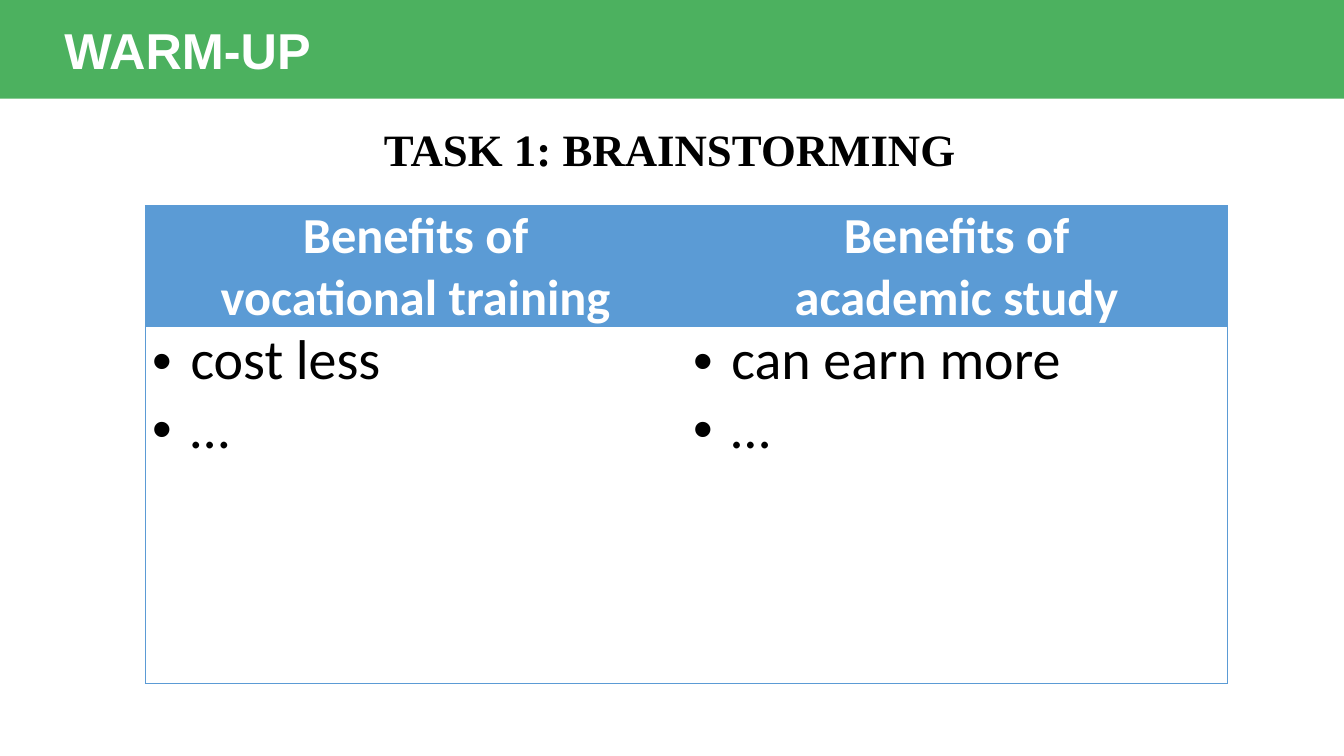
from lxml import etree
from pptx import Presentation
from pptx.dml.color import RGBColor
from pptx.enum.shapes import MSO_SHAPE
from pptx.enum.text import MSO_ANCHOR, MSO_AUTO_SIZE, PP_ALIGN
from pptx.oxml.ns import qn
from pptx.util import Inches, Pt

RECTANGLE = MSO_SHAPE.RECTANGLE
TOP = MSO_ANCHOR.TOP
GROW = MSO_AUTO_SIZE.SHAPE_TO_FIT_TEXT
LEFT, CENTER = PP_ALIGN.LEFT, PP_ALIGN.CENTER

GREEN, BLUE, WHITE, BLACK = "4CB15F", "5B9BD5", "FFFFFF", "000000"
BANNER_FONT = {"name": "Arial", "size": Pt(36), "bold": True}
TASK_FONT = {"name": "Times New Roman", "size": Pt(32), "bold": True}
HEADING_FONT = {"name": "Calibri", "size": Pt(36), "bold": True}
BODY_FONT = {"name": "Calibri", "size": Pt(40), "bold": False}
CELL_FORMAT = {"margin_left": Inches(0.07), "margin_right": Inches(0.07),
               "margin_top": 0, "margin_bottom": 0, "vertical_anchor": TOP}

BENEFITS = [
    (["Benefits of", "vocational training"], ["cost less", "…"]),
    (["Benefits of", "academic study"], ["can earn more", "…"]),
]


def color(hex_value):
    return RGBColor.from_string(hex_value)


def apply_format(target, values):
    for name, value in values.items():
        setattr(target, name, value)


def write_lines(text_frame, lines, font, hex_value, alignment=LEFT):
    for index, line in enumerate(lines):
        paragraph = text_frame.add_paragraph() if index else text_frame.paragraphs[0]
        paragraph.alignment = alignment
        run = paragraph.add_run()
        run.text = line
        apply_format(run.font, font)
        run.font.color.rgb = color(hex_value)


def add_label(slide, box, text, font, hex_value, wrap):
    text_frame = slide.shapes.add_textbox(*map(Inches, box)).text_frame
    apply_format(text_frame, {"word_wrap": wrap, "auto_size": GROW})
    write_lines(text_frame, [text], font, hex_value)


def add_bullets(text_frame):
    indent = Inches(0.38)
    for paragraph in text_frame.paragraphs:
        properties = paragraph._p.get_or_add_pPr()
        properties.set("marL", str(indent))
        properties.set("indent", str(-indent))
        etree.SubElement(properties, qn("a:buFont")).set("typeface", "Arial")
        etree.SubElement(properties, qn("a:buChar")).set("char", "•")


def set_borders(cell, visible_sides):
    # Border lines come before the fill in the cell properties
    properties = cell._tc.get_or_add_tcPr()
    for index, side in enumerate("LRTB"):
        line = etree.Element(qn(f"a:ln{side}"), w=str(Pt(0.5)))
        if side in visible_sides:
            fill = etree.SubElement(line, qn("a:solidFill"))
            etree.SubElement(fill, qn("a:srgbClr")).set("val", BLUE)
        else:
            etree.SubElement(line, qn("a:noFill"))
        properties.insert(index, line)


def fill_cell(cell, background, borders):
    apply_format(cell, CELL_FORMAT)
    if background:
        cell.fill.solid()
        cell.fill.fore_color.rgb = color(background)
    else:
        cell.fill.background()
    set_borders(cell, borders)


def add_banner(slide, box):
    left, top, width, height = box
    banner = slide.shapes.add_shape(RECTANGLE, *map(Inches, box))
    banner.shadow.inherit = False
    banner.fill.solid()
    banner.fill.fore_color.rgb = color(GREEN)
    banner.line.fill.background()
    add_label(slide, (left + 0.54, top + 0.14, 5, 0.71),
              "WARM-UP", BANNER_FONT, WHITE, True)


def add_benefits_table(slide, box):
    heading_height = 1.2
    left, top, width, height = box
    table = slide.shapes.add_table(2, len(BENEFITS), *map(Inches, box)).table
    table.horz_banding = False
    table.rows[0].height = Inches(heading_height)
    table.rows[1].height = Inches(height - heading_height)
    for column, (heading, points) in enumerate(BENEFITS):
        table.columns[column].width = Inches(width / len(BENEFITS))
        outer_side = "R" if column else "L"

        # Heading
        cell = table.cell(0, column)
        fill_cell(cell, BLUE, outer_side + "TB")
        write_lines(cell.text_frame, heading, HEADING_FONT, WHITE, CENTER)

        # Bulleted answers
        cell = table.cell(1, column)
        fill_cell(cell, None, outer_side + "TB")
        write_lines(cell.text_frame, points, BODY_FONT, BLACK)
        add_bullets(cell.text_frame)


def main():
    presentation = Presentation()
    presentation.slide_width = Inches(13.33)
    presentation.slide_height = Inches(7.5)
    slide = presentation.slides.add_slide(presentation.slide_layouts[6])
    add_banner(slide, (0, 0, 13.33, 0.98))
    add_benefits_table(slide, (1.44, 2.04, 10.73, 4.74))
    add_label(slide, (3.71, 1.16, 5.92, 0.64),
              "TASK 1: BRAINSTORMING", TASK_FONT, BLACK, False)
    presentation.save("out.pptx")


if __name__ == "__main__":
    main()
